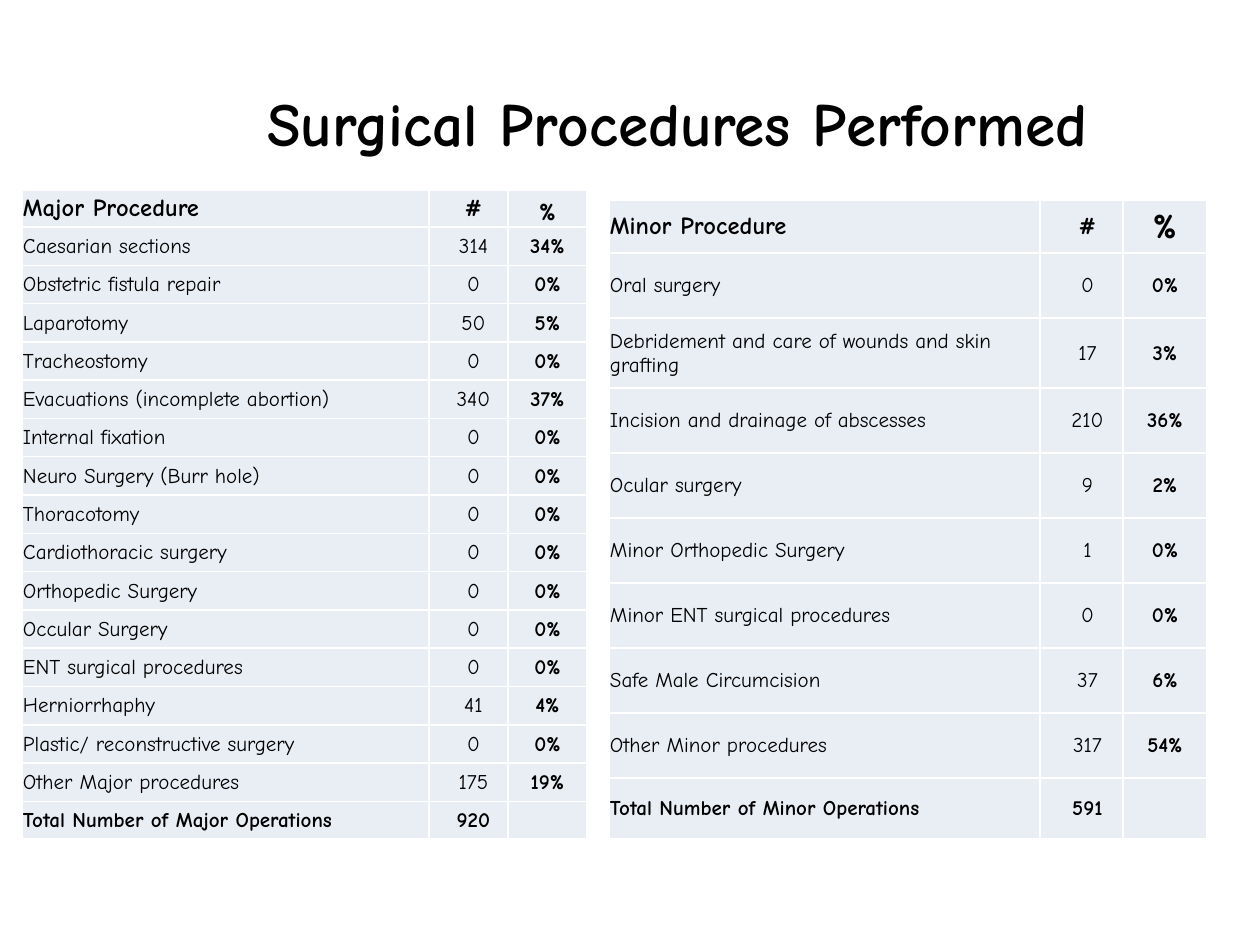
from lxml import etree
from pptx import Presentation
from pptx.dml.color import RGBColor
from pptx.enum.text import MSO_ANCHOR, PP_ALIGN
from pptx.oxml.ns import qn
from pptx.util import Emu, Pt

EMU_PER_PX = 914400 // 126
LEFT, CENTER = PP_ALIGN.LEFT, PP_ALIGN.CENTER
MIDDLE, BOTTOM = MSO_ANCHOR.MIDDLE, MSO_ANCHOR.BOTTOM
FONT = "Comic Neue"
COLORS = {"text": "000000", "cell": "E9EDF4", "border": "FFFFFF", "background": "FFFFFF"}

MAJOR = [
    ("Major Procedure", "#", "%"),
    ("Caesarian sections", "314", "34%"),
    ("Obstetric fistula repair", "0", "0%"),
    ("Laparotomy", "50", "5%"),
    ("Tracheostomy", "0", "0%"),
    ("Evacuations (incomplete abortion)", "340", "37%"),
    ("Internal fixation", "0", "0%"),
    ("Neuro Surgery (Burr hole)", "0", "0%"),
    ("Thoracotomy", "0", "0%"),
    ("Cardiothoracic surgery", "0", "0%"),
    ("Orthopedic Surgery", "0", "0%"),
    ("Occular Surgery", "0", "0%"),
    ("ENT surgical procedures", "0", "0%"),
    ("Herniorrhaphy", "41", "4%"),
    ("Plastic/ reconstructive surgery", "0", "0%"),
    ("Other Major procedures", "175", "19%"),
    ("Total Number of Major Operations", "920", ""),
]
MINOR = [
    ("Minor Procedure", "#", "%"),
    ("Oral surgery", "0", "0%"),
    ("Debridement and care of wounds and skin grafting", "17", "3%"),
    ("Incision and drainage of abscesses", "210", "36%"),
    ("Ocular surgery", "9", "2%"),
    ("Minor Orthopedic Surgery", "1", "0%"),
    ("Minor ENT surgical procedures", "0", "0%"),
    ("Safe Male Circumcision", "37", "6%"),
    ("Other Minor procedures", "317", "54%"),
    ("Total Number of Minor Operations", "591", ""),
]


def px(length):
    return Emu(length * EMU_PER_PX)


def rgb(name):
    return RGBColor.from_string(COLORS[name])


def write(paragraph, text, size, bold, align):
    if text:
        paragraph.text = text
    paragraph.alignment = align
    font = paragraph.font
    font.name, font.size, font.bold = FONT, Pt(size), bold
    font.color.rgb = rgb("text")


def add_borders(cell):
    properties = cell._tc.get_or_add_tcPr()
    for side in ("a:lnL", "a:lnR", "a:lnT", "a:lnB"):
        line = etree.SubElement(properties, qn(side), w=str(Pt(1)))
        fill = etree.SubElement(line, qn("a:solidFill"))
        etree.SubElement(fill, qn("a:srgbClr"), val=COLORS["border"])


def style_cell(cell, left_inset):
    add_borders(cell)
    cell.fill.solid()
    cell.fill.fore_color.rgb = rgb("cell")
    cell.vertical_anchor = MIDDLE
    cell.margin_left = px(left_inset)
    cell.margin_right = cell.margin_top = px(1)
    cell.margin_bottom = 0


def add_title(slide, text):
    title = slide.shapes.add_textbox(px(147), px(73), px(1061), px(98))
    frame = title.text_frame
    frame.word_wrap = True
    frame.vertical_anchor = MIDDLE
    write(frame.paragraphs[0], text, 35, True, CENTER)


def add_procedures(slide, left, top, widths, heights, procedures, count_inset):
    """Table of name, count and share; heights are in EMU, other lengths in px."""
    frame = slide.shapes.add_table(len(procedures), len(widths), px(left), px(top),
                                   px(sum(widths)), Emu(sum(heights)))
    table = frame.table
    table.first_row = table.horz_banding = False
    for column, width in zip(table.columns, widths):
        column.width = px(width)
    last = len(procedures) - 1
    for r, (procedure, height) in enumerate(zip(procedures, heights)):
        table.rows[r].height = height
        for c, text in enumerate(procedure):
            cell = table.cell(r, c)
            style_cell(cell, count_inset if c == 1 else 1)
            write(cell.text_frame.paragraphs[0], text, 14 if r == 0 else 12,
                  r in (0, last) or c == 2, CENTER if c else LEFT)
    return table


def main():
    prs = Presentation()
    prs.slide_width, prs.slide_height = px(1260), px(945)
    slide = prs.slides.add_slide(prs.slide_layouts[6])
    slide.background.fill.solid()
    slide.background.fill.fore_color.rgb = rgb("background")

    add_title(slide, "Surgical Procedures Performed")

    major_heights = [px(37)] + [px(575) // 15] * 15 + [px(37)]
    major = add_procedures(slide, 22, 190, (407, 79, 79), major_heights, MAJOR, 11)
    major.cell(0, 2).vertical_anchor = BOTTOM

    minor_heights = [px(height) for height in (53, 65, 70, *[65] * 6, 61)]
    minor = add_procedures(slide, 609, 200, (431, 83, 84), minor_heights, MINOR, 13)
    minor.cell(0, 2).text_frame.paragraphs[0].font.size = Pt(20)

    prs.save("out.pptx")


if __name__ == "__main__":
    main()
